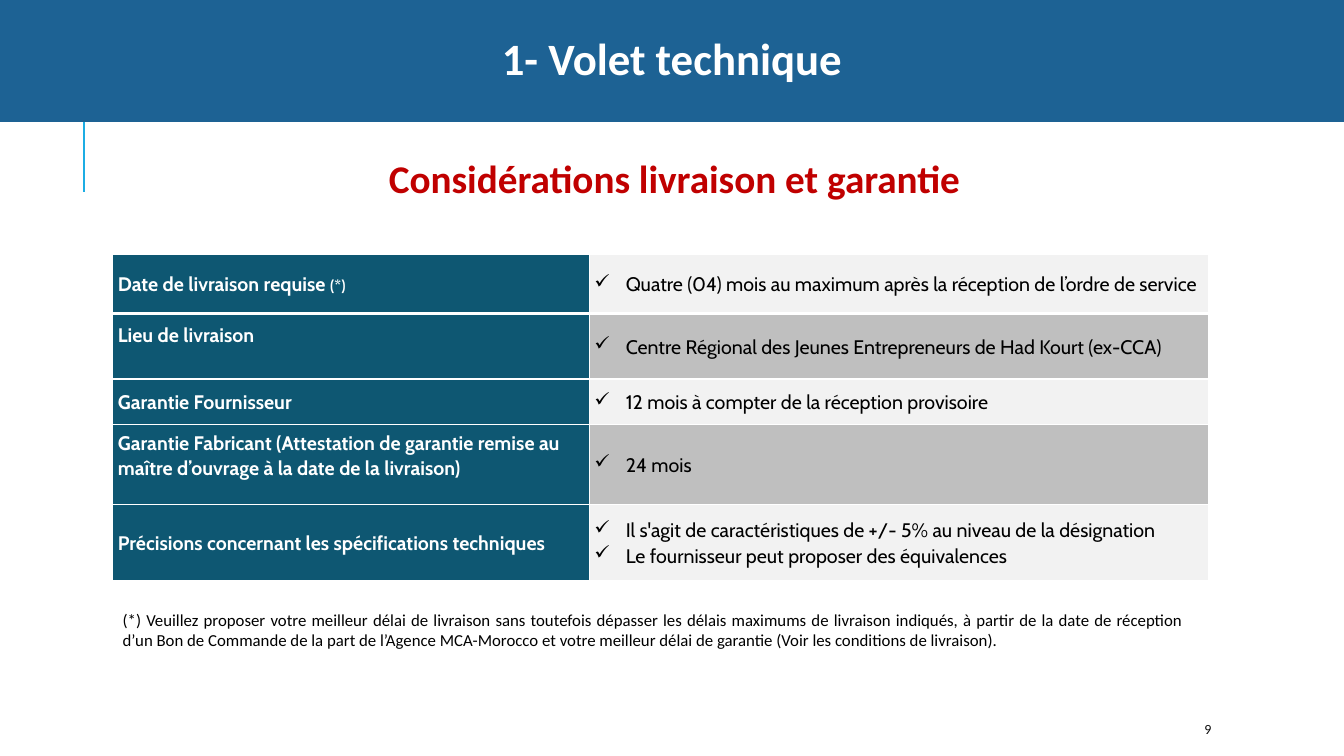
from lxml import etree
from pptx import Presentation
from pptx.dml.color import RGBColor
from pptx.enum.shapes import MSO_CONNECTOR, MSO_SHAPE
from pptx.enum.text import MSO_ANCHOR, MSO_AUTO_SIZE, PP_ALIGN
from pptx.oxml import parse_xml
from pptx.oxml.ns import nsdecls, qn
from pptx.util import Cm, Pt

LINE = MSO_CONNECTOR.STRAIGHT
CHEVRON = MSO_SHAPE.CHEVRON
MIDDLE = MSO_ANCHOR.MIDDLE
TOP = MSO_ANCHOR.TOP
FIXED = MSO_AUTO_SIZE.NONE
LEFT, CENTER, JUSTIFY = PP_ALIGN.LEFT, PP_ALIGN.CENTER, PP_ALIGN.JUSTIFY

COLORS = {
    "band": "1D6294", "rule": "1CADE4", "head": "C00000", "label": "0E5772",
    "light": "F2F2F2", "gray": "BFBFBF", "white": "FFFFFF", "black": "000000",
    "page": "0D0D0D",
}

# label, its small suffix, answers, row height, bottom inset of the label
ROWS = [
    ("Date de livraison requise ", "(*)",
     ["Quatre (04) mois au maximum après la réception de l’ordre de service"], 1.5, 0.13),
    ("Lieu de livraison", "",
     ["Centre Régional des Jeunes Entrepreneurs de Had Kourt (ex-CCA)"], 1.65, 0.72),
    ("Garantie Fournisseur", "",
     ["12 mois à compter de la réception provisoire"], 1.14, 0.13),
    ("Garantie Fabricant (Attestation de garantie remise au maître d’ouvrage "
     "à la date de la livraison)", "", ["24 mois"], 2, 0.6),
    ("Précisions concernant les spécifications techniques", "",
     ["Il s'agit de caractéristiques de +/- 5% au niveau de la désignation",
      "Le fournisseur peut proposer des équivalences"], 1.93, 0.13),
]
NOTE = (
    "(*) Veuillez proposer votre meilleur délai de livraison sans toutefois dépasser "
    "les délais maximums de livraison indiqués, à partir de la date de réception d’un "
    "Bon de Commande de la part de l’Agence MCA-Morocco et votre meilleur délai de "
    "garantie (Voir les conditions de livraison)."
)


def color(name):
    return RGBColor.from_string(COLORS[name])


class Deck:
    def __init__(self):
        self.prs = Presentation()
        self.prs.slide_width, self.prs.slide_height = Cm(33.87), Cm(19.05)
        self.slide = self.prs.slides.add_slide(self.prs.slide_layouts[5])
        self.shapes = self.slide.shapes
        self.font = "Calibri"
        self.grid = "Cabin"

    def style(self, run, size, tint, bold=False, font=None):
        run.font.name = font or self.font
        run.font.size = Pt(size)
        run.font.bold = bold
        run.font.color.rgb = color(tint)

    def label(self, shape, text, size, tint, bold=False, align=LEFT, anchor=MIDDLE):
        frame = shape.text_frame
        frame.text = text
        frame.word_wrap = True
        frame.auto_size = FIXED
        frame.vertical_anchor = anchor
        para = frame.paragraphs[0]
        para.alignment = align
        self.style(para.runs[0], size, tint, bold)
        return para

    def title(self, text):
        shape = self.shapes.title
        shape.left, shape.top, shape.width, shape.height = 0, 0, Cm(33.87), Cm(3.07)
        shape.fill.solid()
        shape.fill.fore_color.rgb = color("band")
        para = self.label(shape, text, 32, "white", True, CENTER)
        para.line_spacing = 0.9

    def rule(self, x, top, end):
        line = self.shapes.add_connector(LINE, Cm(x), Cm(top), Cm(x), Cm(end))
        line.line.color.rgb = color("rule")
        line.line.width = Pt(1.5)
        etree.SubElement(line._element.spPr, qn("a:effectLst"))

    def heading(self, text, box):
        shape = self.shapes.add_shape(CHEVRON, *map(Cm, box))
        shape.shadow.inherit = False
        shape.fill.background()
        shape.line.fill.background()
        para = self.label(shape, text, 28, "head", True, CENTER)
        glow = parse_xml(
            f'<a:effectLst {nsdecls("a")}><a:outerShdw blurRad="50800" dist="38100" '
            'dir="5400000"><a:srgbClr val="000000"><a:alpha val="50000"/></a:srgbClr>'
            '</a:outerShdw></a:effectLst>')
        para.runs[0]._r.rPr.find(qn("a:solidFill")).addnext(glow)

    def text(self, text, box, size, tint, align=LEFT, anchor=MIDDLE):
        shape = self.shapes.add_textbox(*map(Cm, box))
        self.label(shape, text, size, tint, False, align, anchor)

    def cell(self, cell, lines, fill, tint, bold, base, first):
        """Fill one cell; base is its bottom inset, first thickens the lower border."""
        cell.text_frame.text = "\n".join(lines)
        cell.vertical_anchor = MIDDLE
        cell.margin_left = cell.margin_right = cell.margin_top = Cm(0.13)
        cell.margin_bottom = Cm(base)
        for side in "LRTB":
            width = Pt(3 if first and side == "B" else 1)
            cell._tc.get_or_add_tcPr().append(parse_xml(
                f'<a:ln{side} {nsdecls("a")} w="{int(width)}"><a:solidFill>'
                f'<a:srgbClr val="{COLORS["white"]}"/></a:solidFill></a:ln{side}>'))
        cell.fill.solid()
        cell.fill.fore_color.rgb = color(fill)
        for para in cell.text_frame.paragraphs:
            para.line_spacing = 1.07
            self.style(para.runs[0], 14, tint, bold, self.grid)

    def check(self, para):
        props = para._p.get_or_add_pPr()
        props.set("marL", str(int(Cm(0.79))))
        props.set("indent", str(-int(Cm(0.79))))
        etree.SubElement(props, qn("a:buChar")).set("char", "✓")

    def table(self, rows, left, top, widths):
        height = sum(row[3] for row in rows)
        box = (left, top, sum(widths), height)
        table = self.shapes.add_table(len(rows), len(widths), *map(Cm, box)).table
        for col, width in zip(table.columns, widths):
            col.width = Cm(width)
        for i, (label, mark, answers, height, base) in enumerate(rows):
            table.rows[i].height = Cm(height)
            name, info = table.cell(i, 0), table.cell(i, 1)
            self.cell(name, [label], "label", "white", True, base, i == 0)
            if mark:
                run = name.text_frame.paragraphs[0].add_run()
                run.text = mark
                self.style(run, 11, "white", True, self.grid)
            shade = "gray" if i % 2 else "light"
            self.cell(info, answers, shade, "black", False, 0.13, i == 0)
            for para in info.text_frame.paragraphs:
                self.check(para)


def main():
    deck = Deck()
    deck.title("1- Volet technique")
    deck.rule(2.11, 3.07, 4.83)
    deck.text("9", (30.1, 17.98, 2.69, 0.76), 10, "page")
    deck.heading("Considérations livraison et garantie", (5.59, 3.78, 22.81, 1.4))
    deck.table(ROWS, 2.84, 6.4, (12.01, 15.62))
    deck.text(NOTE, (2.84, 15.24, 27.25, 1.27), 12, "black", JUSTIFY, TOP)
    deck.prs.save("out.pptx")


if __name__ == "__main__":
    main()
